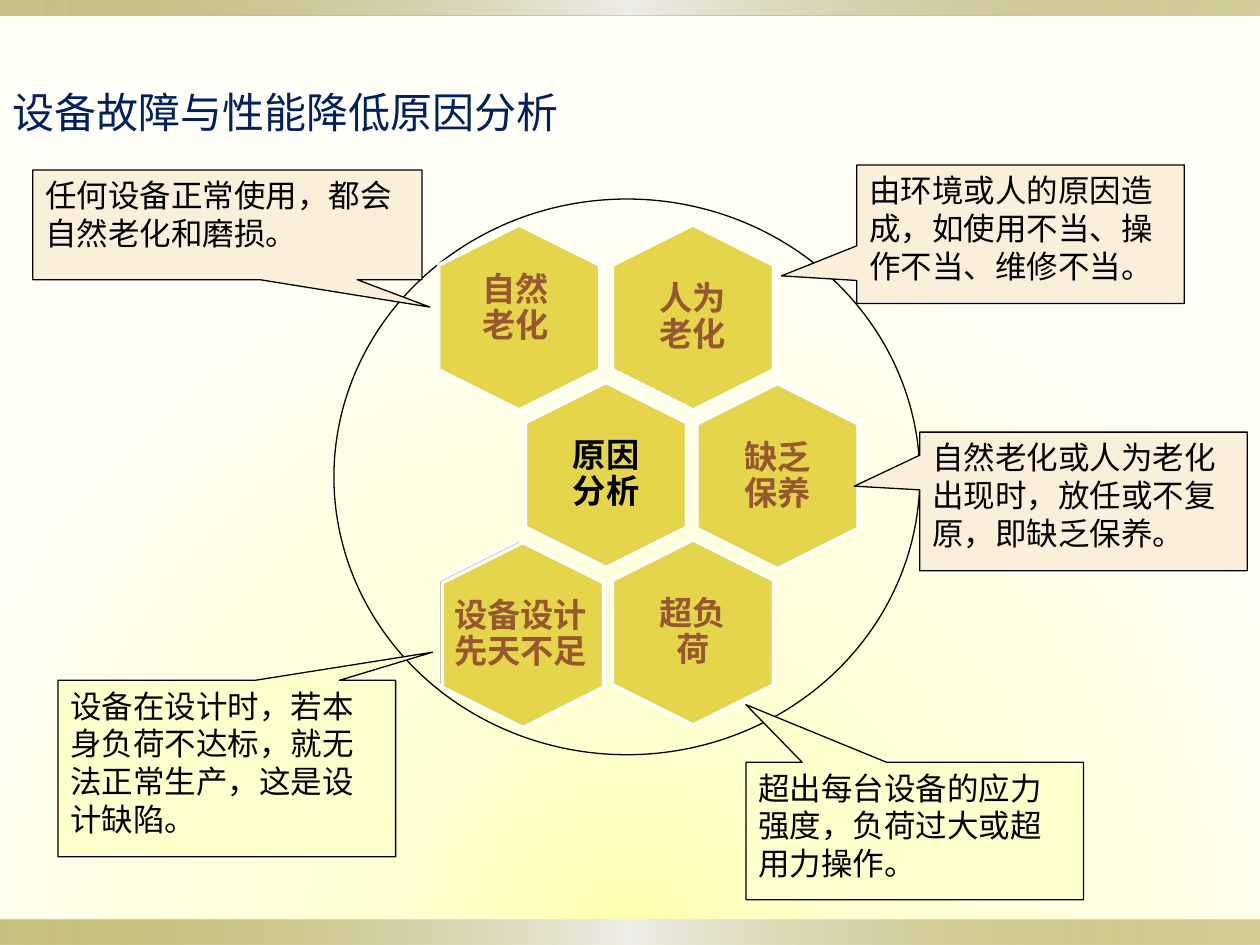
"""Build the slide on causes of equipment failure and reduced performance."""
from dataclasses import dataclass

from lxml import etree
from pptx import Presentation
from pptx.dml.color import RGBColor
from pptx.enum import shapes, text
from pptx.oxml import ns
from pptx.util import Inches, Pt


@dataclass(frozen=True)
class Theme:
    font: str = "Noto Sans CJK SC"
    title: str = "002060"
    ink: str = "000000"
    label: str = "975730"
    hexagon: str = "E5D54B"
    olive: str = "918415"
    silver: str = "EEEDE8"
    white: str = "FFFFFF"
    peach: str = "FAF0D9"
    lemon: str = "FFFFCC"
    title_size: int = 24
    body_size: int = 18
    label_size: int = 19


@dataclass(frozen=True)
class Cell:
    """A hexagon on the half-step grid, with an optional label."""
    col: int
    row: int
    label: str = ""
    color: str = Theme.label
    fill: str = Theme.hexagon
    nudge: tuple[float, float] = (0, 0)
    label_width: float = 0.88
    label_shift: tuple[float, float] = (0, 0)


@dataclass(frozen=True)
class Callout:
    box: tuple[float, float, float, float]
    tip: tuple[float, float]
    fill: str
    words: str


T = Theme()
HEX_W, HEX_H, LABEL_H = 1.47, 1.28, 1.01
GRID_X, GRID_Y, STEP_X, STEP_Y = 4.12, 2.52, 0.69, 1.25

CELLS = [
    Cell(2, 0, "人为老化"),
    Cell(0, 0, "自然老化", label_shift=(-0.03, -0.07)),
    Cell(1, 1, "原因分析", color=T.ink),
    Cell(3, 1),
    Cell(2, 2, "超负荷"),
    Cell(0, 2, fill=T.olive),
    Cell(3, 1, "缺乏保养", nudge=(-0.02, 0.01)),
    Cell(0, 2, "设备设计先天不足", nudge=(0.03, 0.02), label_width=1.25,
         label_shift=(-0.02, 0)),
]
CALLOUTS = [
    Callout((6.8, 1.31, 2.6, 1.1), (-0.73, 0.3), T.peach,
            "由环境或人的原因造成，如使用不当、操作不当、维修不当。"),
    Callout((0.46, 5.4, 2.68, 1.4), (0.61, -0.66), T.lemon,
            "设备在设计时，若本身负荷不达标，就无法正常生产，这是设计缺陷。"),
    Callout((0.26, 1.35, 3.09, 0.87), (0.52, 0.75), T.peach,
            "任何设备正常使用，都会自然老化和磨损。"),
    Callout((7.3, 3.43, 2.6, 1.1), (-0.7, -0.11), T.peach,
            "自然老化或人为老化出现时，放任或不复原，即缺乏保养。"),
    Callout((5.92, 6.05, 2.68, 1.09), (-0.5, -0.92), T.lemon,
            "超出每台设备的应力强度，负荷过大或超用力操作。"),
]


def write(sp, words: str, *, size: int, color: str = T.ink, bold: bool = False,
          align=text.PP_ALIGN.LEFT, anchor=text.MSO_ANCHOR.TOP,
          inset: float | None = None, spacing: float | None = None) -> None:
    """Put one formatted paragraph into a shape."""
    tf = sp.text_frame
    tf.word_wrap = True
    tf.auto_size = text.MSO_AUTO_SIZE.NONE
    tf.vertical_anchor = anchor
    if inset is not None:
        tf.margin_left = tf.margin_right = Inches(inset)
        tf.margin_top = tf.margin_bottom = Inches(inset)
    p = tf.paragraphs[0]
    p.alignment, p.line_spacing = align, spacing
    r = p.add_run()
    r.text = words
    r.font.name, r.font.size, r.font.bold = T.font, Pt(size), bold
    r.font.color.rgb = RGBColor.from_string(color)
    ea = etree.SubElement(r.font._element, ns.qn("a:ea"))
    ea.set("typeface", T.font)


def add_shape(slide, kind, box: tuple[float, float, float, float],
              fill: str | None = None, line: str | None = None, weight: float = 0.75):
    """Add a flat preset shape."""
    sp = slide.shapes.add_shape(kind, *map(Inches, box))
    sp.shadow.inherit = False
    if fill:
        sp.fill.solid()
        sp.fill.fore_color.rgb = RGBColor.from_string(fill)
    else:
        sp.fill.background()
    if line:
        sp.line.color.rgb = RGBColor.from_string(line)
        sp.line.width = Pt(weight)
    else:
        sp.line.fill.background()
    return sp


def set_gradient(fill, element, stops: list[tuple[int, str, int]],
                 focus: dict[str, int] | None = None) -> None:
    """Give a fill its stops of position, colour and opacity in percent."""
    fill.gradient()
    grad = next(element.iter(ns.qn("a:gradFill")))
    for child in list(grad):
        grad.remove(child)
    gs_list = etree.SubElement(grad, ns.qn("a:gsLst"))
    for pos, color, alpha in stops:
        gs = etree.SubElement(gs_list, ns.qn("a:gs"), pos=str(pos * 1000))
        clr = etree.SubElement(gs, ns.qn("a:srgbClr"), val=color)
        if alpha < 100:
            etree.SubElement(clr, ns.qn("a:alpha"), val=str(alpha * 1000))
    if focus:
        radial = etree.SubElement(grad, ns.qn("a:path"), path="circle")
        rect = etree.SubElement(radial, ns.qn("a:fillToRect"))
        for side, percent in focus.items():
            rect.set(side, str(percent * 1000))
    else:
        etree.SubElement(grad, ns.qn("a:lin"), ang="0", scaled="0")


def add_bar(slide, top: float, height: float) -> None:
    """Add a metallic band across the slide."""
    sp = add_shape(slide, shapes.MSO_SHAPE.RECTANGLE, (0, top, 10, height))
    set_gradient(sp.fill, sp.element,
                 [(0, T.olive, 50), (50, T.silver, 100), (100, T.olive, 40)])


def add_cell(slide, cell: Cell) -> None:
    """Add an upright hexagon and its label."""
    x = GRID_X + cell.col * STEP_X + cell.nudge[0]
    y = GRID_Y + cell.row * STEP_Y + cell.nudge[1]
    sp = add_shape(slide, shapes.MSO_SHAPE.HEXAGON,
                   (x - HEX_W / 2, y - HEX_H / 2, HEX_W, HEX_H), cell.fill, T.white, 2)
    sp.rotation = 90
    sp.adjustments[0] = 0.25
    if cell.label:
        left = x + cell.label_shift[0] - cell.label_width / 2
        top = y + cell.label_shift[1] - LABEL_H / 2
        box = slide.shapes.add_textbox(
            *map(Inches, (left, top, cell.label_width, LABEL_H)))
        write(box, cell.label, size=T.label_size, color=cell.color, bold=True,
              align=text.PP_ALIGN.CENTER, anchor=text.MSO_ANCHOR.MIDDLE,
              inset=0.08, spacing=0.9)


def add_callout(slide, note: Callout) -> None:
    """Add an explanation whose tip points at a hexagon."""
    sp = add_shape(slide, shapes.MSO_SHAPE.RECTANGULAR_CALLOUT, note.box, note.fill, T.ink)
    sp.adjustments[0], sp.adjustments[1] = note.tip
    write(sp, note.words, size=T.body_size)


def main() -> None:
    """Build and save the slide."""
    prs = Presentation()
    prs.slide_width, prs.slide_height = Inches(10), Inches(7.5)
    slide = prs.slides.add_slide(prs.slide_layouts[5])
    set_gradient(slide.background.fill, slide.element,
                 [(0, "FFFFAC", 100), (31, "FFFFD2", 100), (100, "FFFFF7", 100)],
                 focus={"l": 50, "t": 150, "r": 50, "b": 0})
    add_bar(slide, 7.3, 0.2)
    add_bar(slide, 0, 0.12)
    title = slide.shapes.title
    title.left, title.top, title.width, title.height = map(Inches, (0, 0.39, 8.46, 1))
    write(title, "设备故障与性能降低原因分析", size=T.title_size, color=T.title,
          anchor=text.MSO_ANCHOR.MIDDLE)
    add_shape(slide, shapes.MSO_SHAPE.OVAL, (2.65, 1.58, 4.65, 4.41), line=T.ink)
    for cell in CELLS:
        add_cell(slide, cell)
    for note in CALLOUTS:
        add_callout(slide, note)
    prs.save("out.pptx")


if __name__ == "__main__":
    main()
